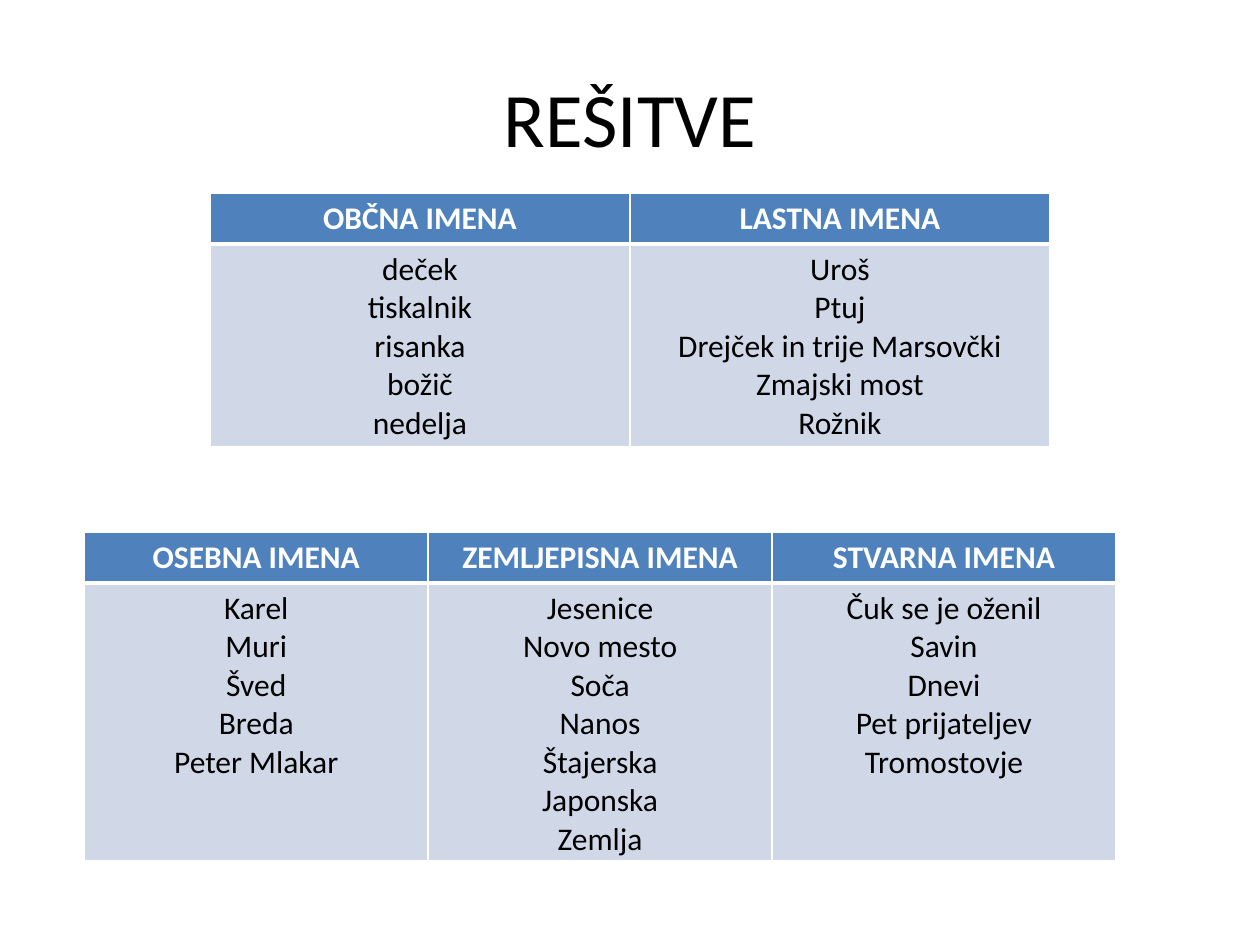
from lxml import etree
from pptx import Presentation
from pptx.dml.color import RGBColor
from pptx.enum import text as t
from pptx.oxml import ns
from pptx.util import Pt

HUES = {"head": "4F81BD", "body": "D0D8E8", "light": "FFFFFF", "dark": "000000"}
FONT = "Calibri"

COMMON = {
    "OBČNA IMENA": ["deček", "tiskalnik", "risanka", "božič", "nedelja"],
    "LASTNA IMENA": ["Uroš", "Ptuj", "Drejček in trije Marsovčki",
                     "Zmajski most", "Rožnik"],
}
PROPER = {
    "OSEBNA IMENA": ["Karel", "Muri", "Šved", "Breda", "Peter Mlakar"],
    "ZEMLJEPISNA IMENA": ["Jesenice", "Novo mesto", "Soča", "Nanos",
                          "Štajerska", "Japonska", "Zemlja"],
    "STVARNA IMENA": ["Čuk se je oženil", "Savin", "Dnevi",
                      "Pet prijateljev", "Tromostovje"],
}


def color(name):
    return RGBColor.from_string(HUES[name])


def write(frame, lines, hue, **form):
    """Fill a text frame with centred lines."""
    for i, line in enumerate(lines):
        para = frame.paragraphs[0] if i == 0 else frame.add_paragraph()
        para.alignment = t.PP_ALIGN.CENTER
        run = para.add_run()
        run.text = line
        for key, value in {"name": FONT, **form}.items():
            setattr(run.font, key, value)
        run.font.color.rgb = color(hue)


def edge(cell, widths):
    """Draw light cell borders; widths are left, right, top, bottom."""
    props = cell._tc.get_or_add_tcPr()
    for i, (side, width) in enumerate(zip("LRTB", widths)):
        line = etree.Element(ns.qn(f"a:ln{side}"), w=str(Pt(width)))
        fill = etree.SubElement(line, ns.qn("a:solidFill"))
        etree.SubElement(fill, ns.qn("a:srgbClr"), val=HUES["light"])
        props.insert(i, line)


def add_title(slide, words, left, top, width, height):
    frame = slide.shapes.add_textbox(Pt(left), Pt(top), Pt(width), Pt(height)).text_frame
    frame.word_wrap = True
    frame.vertical_anchor = t.MSO_ANCHOR.MIDDLE
    write(frame, [words], "dark", size=Pt(44))


def add_names(slide, names, left, top, width, height):
    """Place a table with one column for each kind of name."""
    head = 29.2
    table = slide.shapes.add_table(2, len(names), Pt(left), Pt(top),
                                   Pt(width), Pt(height)).table
    table.rows[0].height = Pt(head)
    table.rows[1].height = Pt(height - head)
    for col, (kind, items) in enumerate(names.items()):
        table.columns[col].width = Pt(width / len(names))
        rows = [([kind], "head", "light", True, (1, 1, 1, 3)),
                (items, "body", "dark", False, (1, 1, 3, 1))]
        for row, (lines, back, hue, bold, widths) in enumerate(rows):
            cell = table.cell(row, col)
            cell.fill.solid()
            cell.fill.fore_color.rgb = color(back)
            edge(cell, widths)
            write(cell.text_frame, lines, hue, size=Pt(18), bold=bold)


def main():
    deck = Presentation()
    deck.slide_width, deck.slide_height = Pt(720), Pt(540)
    slide = deck.slides.add_slide(deck.slide_layouts[6])
    add_title(slide, "REŠITVE", 36, 21.6, 648, 90)
    # Common and proper nouns, then the kinds of proper nouns
    add_names(slide, COMMON, 120, 110.2, 480, 144.8)
    add_names(slide, PROPER, 48.2, 304, 589.5, 188)
    deck.save("out.pptx")


if __name__ == "__main__":
    main()
